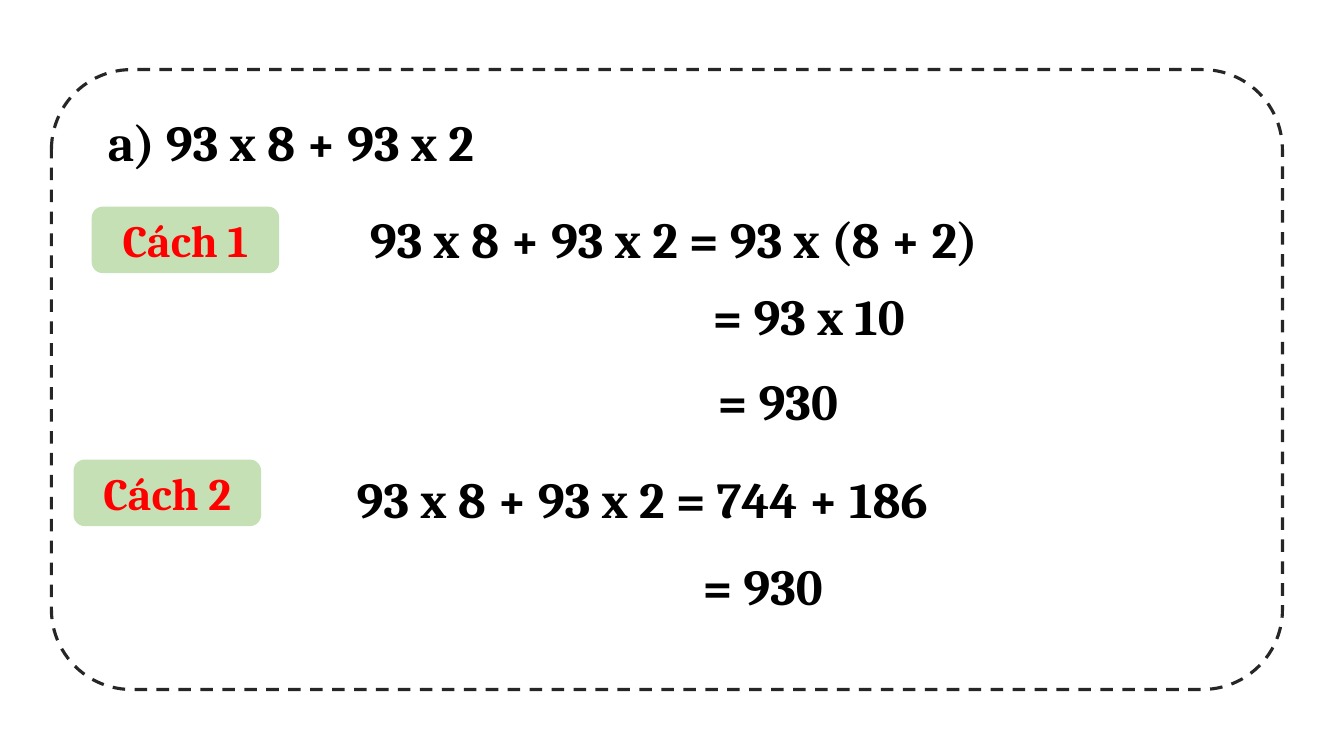
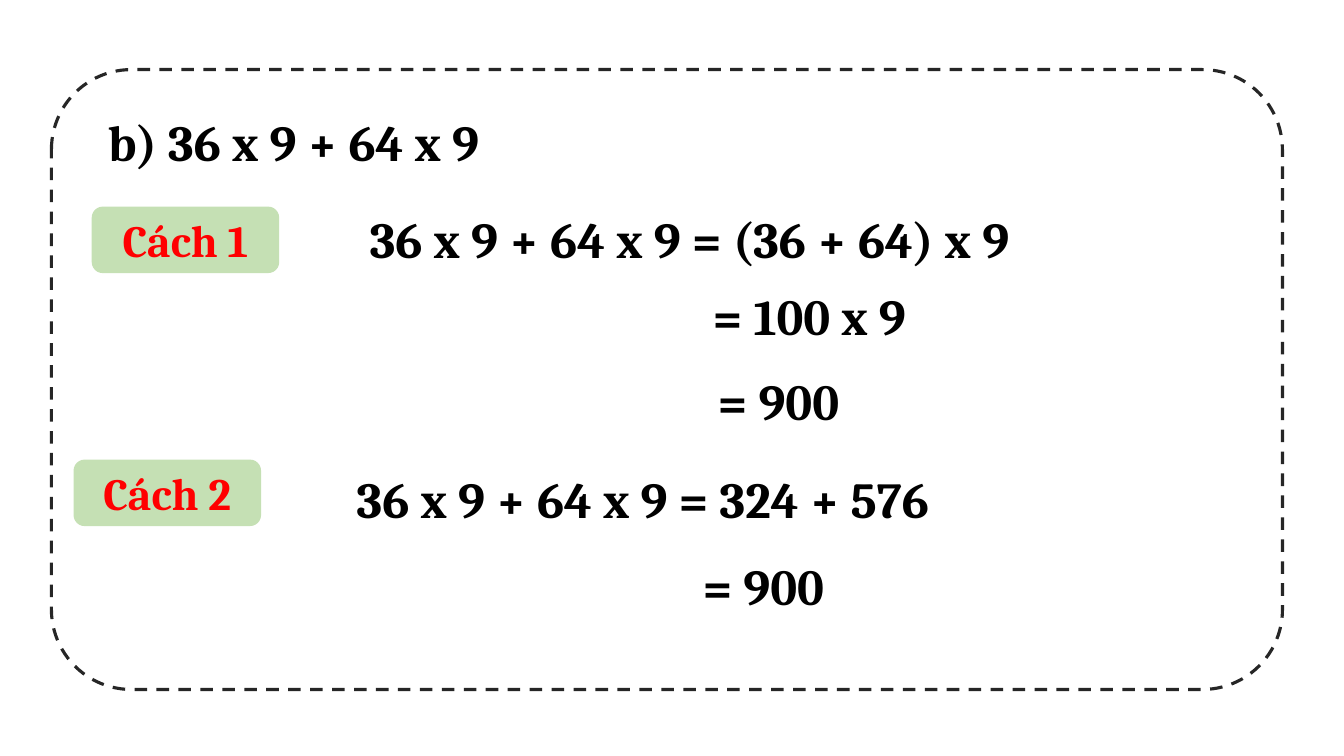
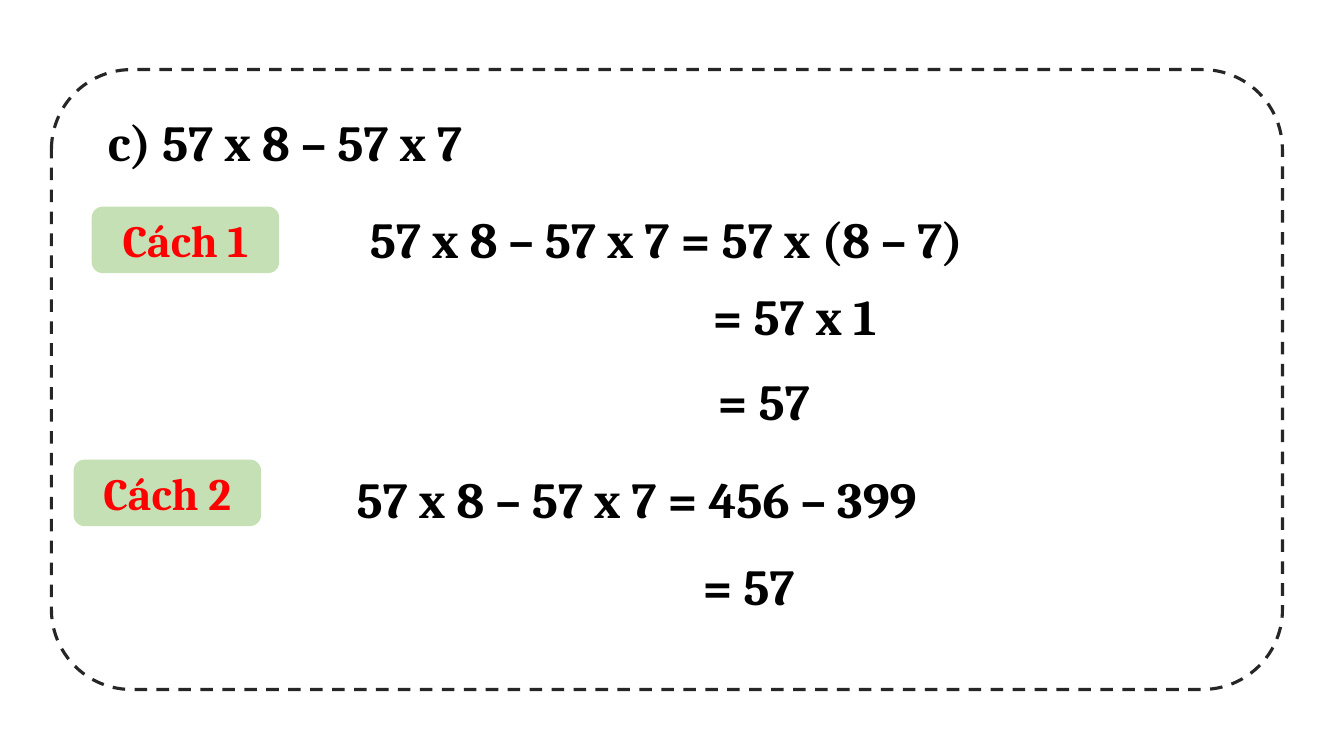
import pptx
import pptx.util
import pptx.dml.color
import pptx.enum.dml
import pptx.enum.shapes
import pptx.enum.text

Inches = pptx.util.Inches
Pt = pptx.util.Pt
RGB = pptx.dml.color.RGBColor.from_string
ROUNDED = pptx.enum.shapes.MSO_SHAPE.ROUNDED_RECTANGLE
ALIGN = pptx.enum.text.PP_ALIGN
ANCHOR = pptx.enum.text.MSO_ANCHOR
AUTO_SIZE = pptx.enum.text.MSO_AUTO_SIZE

COLORS = {"text": "000000", "frame": "262626", "paper": "FFFFFF",
          "tag": "C5E0B4", "tag_text": "FF0000"}
FONT = "Cambria"
LINE_HEIGHT = 0.71

# label, expression, factored form, simplified form, products, result
EXERCISES = [
    ("a", "93 x 8 + 93 x 2", "93 x (8 + 2)", "93 x 10", "744 + 186", "930"),
    ("b", "36 x 9 + 64 x 9", "(36 + 64) x 9", "100 x 9", "324 + 576", "900"),
    ("c", "57 x 8 – 57 x 7", "57 x (8 – 7)", "57 x 1", "456 – 399", "57"),
]
TAGS = [("Cách 1", 0.91, 2.05), ("Cách 2", 0.73, 4.56)]


def write(shape, text, size=36, color="text", align=ALIGN.LEFT, anchor=ANCHOR.TOP):
    """Put one bold line of text in a shape."""
    tf = shape.text_frame
    tf.text = text
    tf.word_wrap = True
    tf.vertical_anchor = anchor
    p = tf.paragraphs[0]
    p.alignment = align
    font = p.runs[0].font
    font.name, font.size, font.bold = FONT, Pt(size), True
    font.color.rgb = RGB(COLORS[color])


def add_rounded(s, left, top, width, height, fill):
    shape = s.shapes.add_shape(ROUNDED, Inches(left), Inches(top),
                               Inches(width), Inches(height))
    shape.shadow.inherit = False
    shape.fill.solid()
    shape.fill.fore_color.rgb = RGB(COLORS[fill])
    shape.line.fill.background()
    return shape


prs = pptx.Presentation()
prs.slide_width, prs.slide_height = Inches(13.33), Inches(7.5)
layout = prs.slide_layouts.get_by_name("Title Only")

layout_title = layout.placeholders[0]
layout_title.left, layout_title.top = Inches(0.97), Inches(1.05)
layout_title.width, layout_title.height = Inches(4.64), Inches(LINE_HEIGHT)

for number, (label, expression, factored, simplified, products, result) in enumerate(EXERCISES):
    s = prs.slides.add_slide(layout)

    if number == 0:
        # The dashed frame moves to the layout, which all slides share
        frame = add_rounded(s, 0.51, 0.69, 12.21, 6.15, "paper")
        frame.adjustments[0] = 0.129
        frame.line.color.rgb = RGB(COLORS["frame"])
        frame.line.width = Pt(2.25)
        frame.line.dash_style = pptx.enum.dml.MSO_LINE.DASH
        layout.element.cSld.spTree.insert(2, frame.element)

    write(s.shapes.title, f"{label}) {expression}")
    s.shapes.title.text_frame.auto_size = AUTO_SIZE.NONE

    for text, left, top in TAGS:
        tag = add_rounded(s, left, top, 1.86, 0.66, "tag")
        write(tag, text, 32, "tag_text", ALIGN.CENTER, ANCHOR.MIDDLE)

    steps = [
        (f"{expression} = {factored}", 3.57, 2.02, 8.24),
        (f"= {simplified}", 6.97, 2.78, 4.2),
        (f"= {result}", 7.02, 3.62, 4.2),
        (f"{expression} = {products}", 3.44, 4.59, 8.24),
        (f"= {result}", 6.87, 5.46, 4.2),
    ]
    for text, left, top, width in steps:
        box = s.shapes.add_textbox(Inches(left), Inches(top),
                                   Inches(width), Inches(LINE_HEIGHT))
        write(box, text)
        box.text_frame.auto_size = AUTO_SIZE.SHAPE_TO_FIT_TEXT

prs.save("out.pptx")
